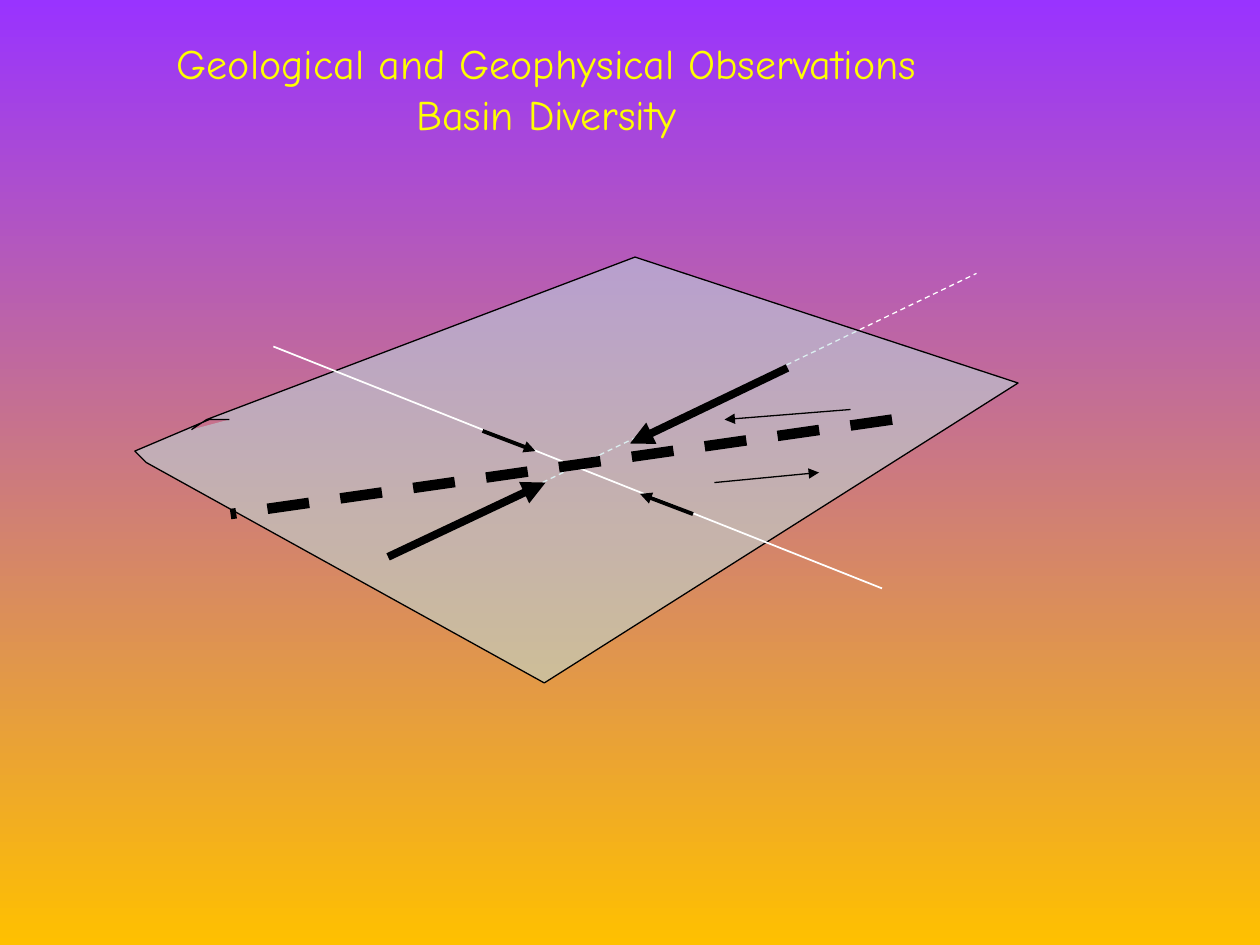
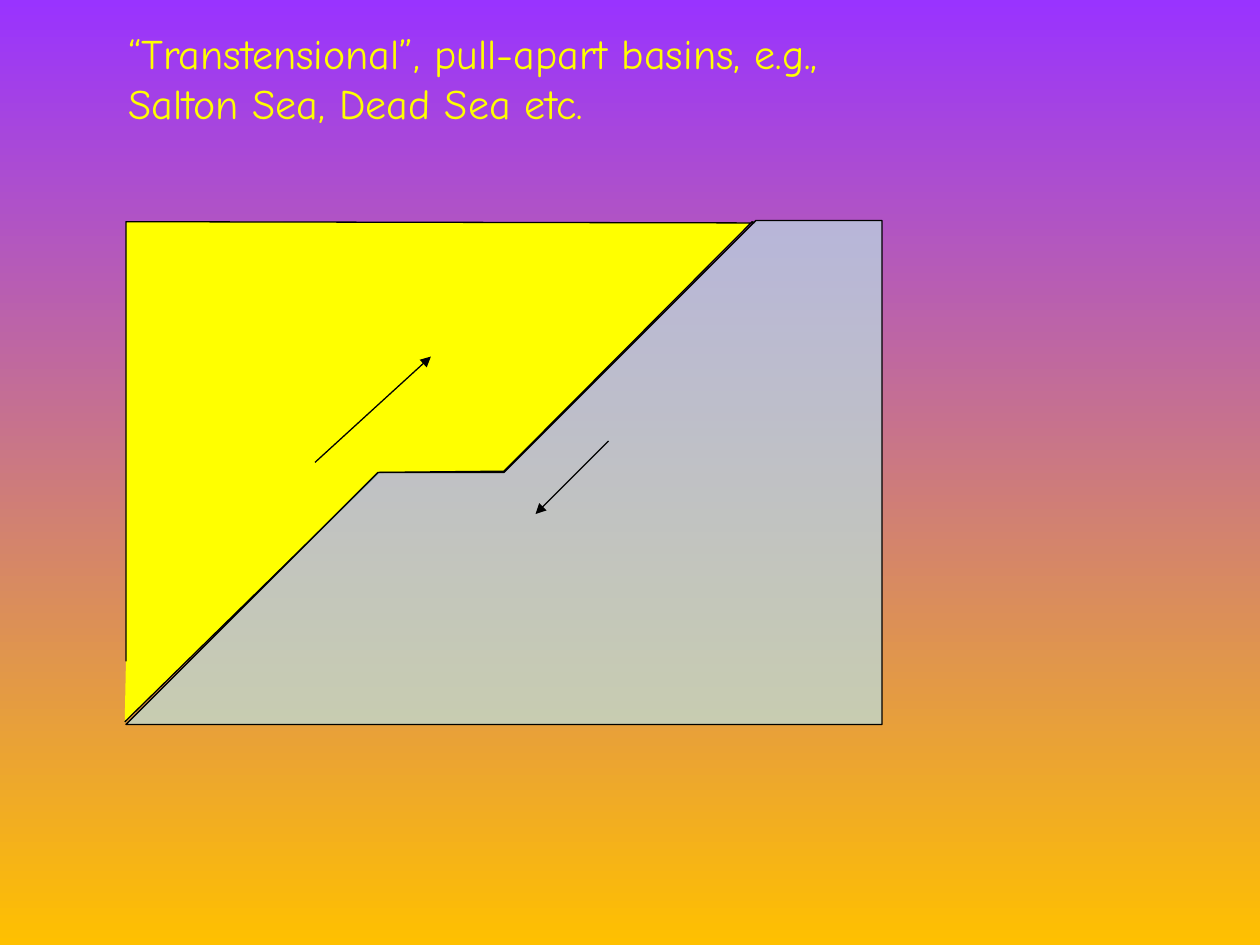
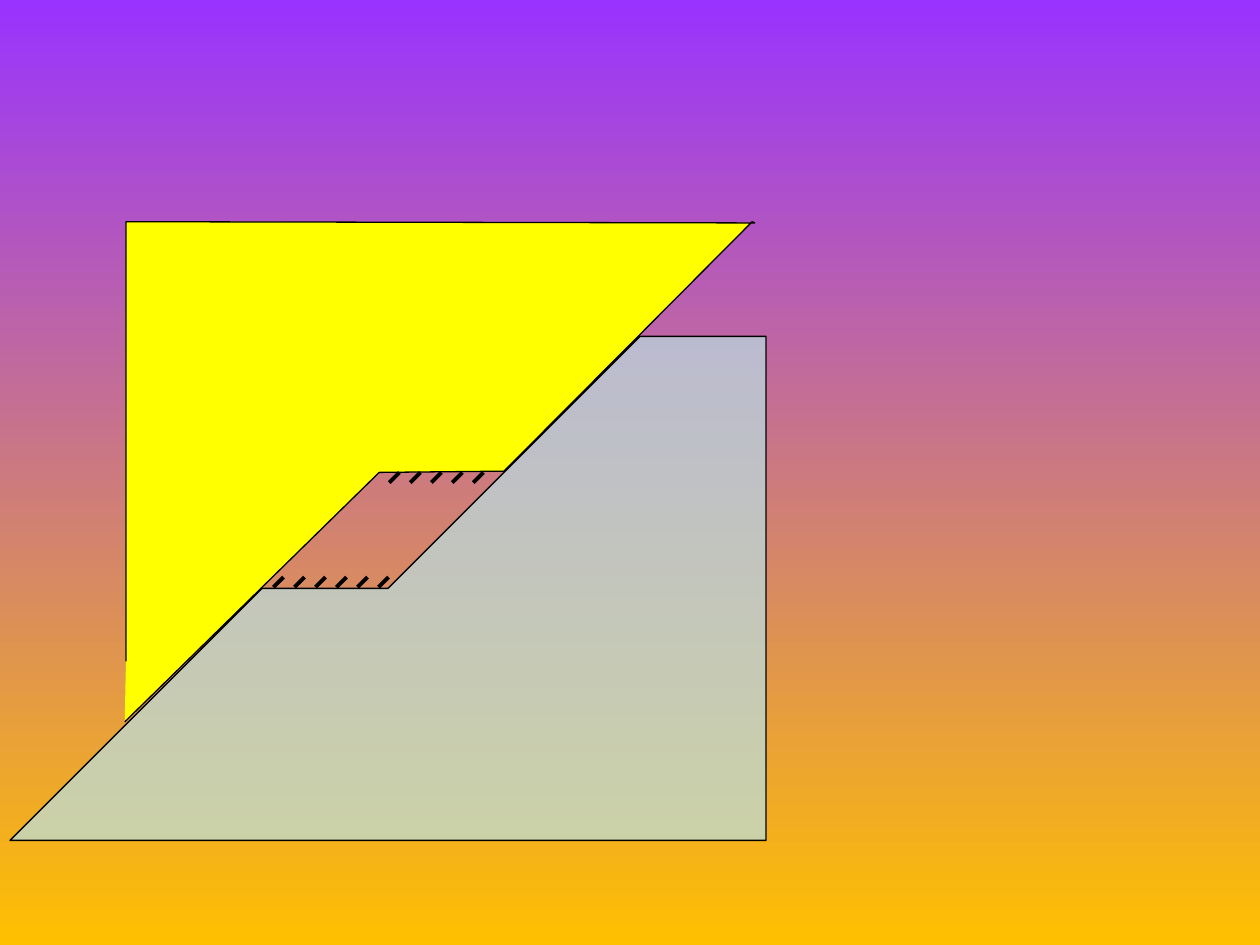
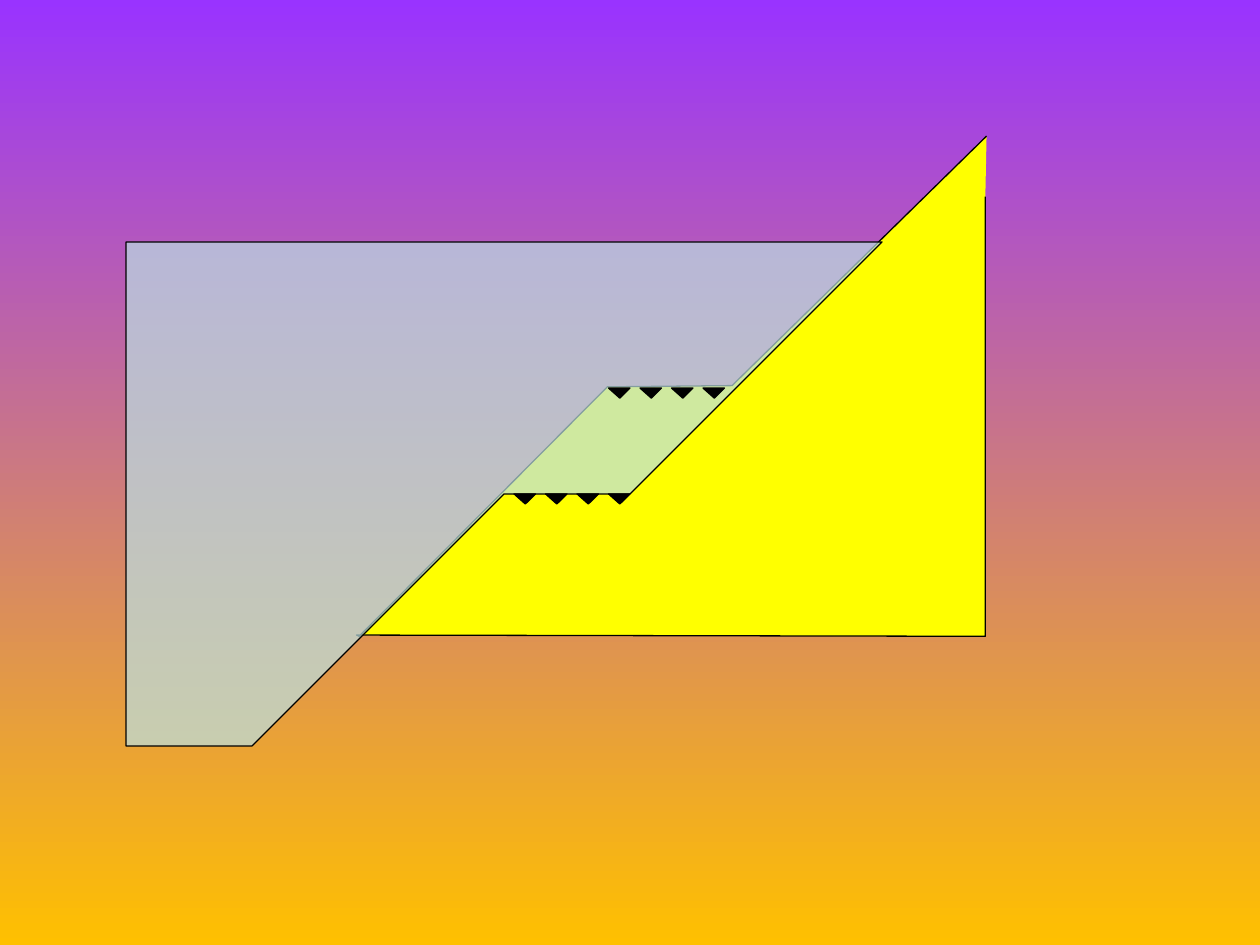
"""Four slides on basin diversity: strike-slip stress, pull-apart and compression."""
from typing import NamedTuple, Optional

from lxml import etree
from pptx import Presentation
from pptx.dml.color import RGBColor
from pptx.enum import dml, shapes, text
from pptx.oxml import ns
from pptx.util import Inches, Pt

FONT = "Comic Neue"
COLORS = {
    "sky": "9933FF",
    "ground": "FFC000",
    "title": "FFFF00",
    "yellow_block": "FFFF00",
    "pale_block": "BBE0E3",
    "black": "000000",
    "white": "FFFFFF",
}
TITLE_ONLY, BLANK = 5, 6
Point = tuple[float, float]


class Stroke(NamedTuple):
    start: Point
    end: Point
    width: float = 0.75
    color: str = "black"
    arrow: bool = False
    dashed: bool = False


class Outline(NamedTuple):
    points: list[Point]
    fill: str
    opacity: Optional[int] = None
    closed: bool = False


# Blocks on either side of the stepped fault
YELLOW_BLOCK = Outline(
    [(0.99, 5.73), (3.01, 3.75), (4, 3.74), (5.97, 1.76),
     (5.99, 1.77), (1, 1.76), (1, 5.25)], "yellow_block")
PALE_BLOCK = Outline(
    [(6, 1.75), (7, 1.75), (7, 5.75), (1, 5.75), (3, 3.75), (4, 3.75)],
    "pale_block", 70, True)
TOOTH = Outline([(0, 0), (0.17, 0), (0.09, 0.08)], "black", closed=True)

# Faulted plane with its stress axes
PLANE = Outline(
    [(1.52, 3.41), (1.64, 3.33), (5.04, 2.04), (8.08, 3.04), (4.32, 5.42),
     (1.16, 3.67), (1.07, 3.58), (1.66, 3.33), (1.82, 3.33)], "pale_block", 52)
HIDDEN_AXIS = Stroke((3.08, 4.42), (7.75, 2.17), 0.75, "white", dashed=True)
STRESS_STROKES = [
    Stroke((6.25, 2.92), (5, 3.52), 4.5, arrow=True),
    Stroke((3.08, 4.42), (4.33, 3.83), 4.5, arrow=True),
    Stroke((2.17, 2.75), (7, 4.67), 1, "white"),
    Stroke((5.5, 4.08), (5.08, 3.92), 2.25, arrow=True),
    Stroke((3.83, 3.42), (4.25, 3.58), 2.25, arrow=True),
    Stroke((7.08, 3.33), (1.83, 4.08), 6, dashed=True),
    Stroke((6.75, 3.25), (5.75, 3.33), arrow=True),
    Stroke((5.67, 3.83), (6.5, 3.75), arrow=True),
]
SLIP_ARROWS = [
    Stroke((4.83, 3.5), (4.25, 4.08), arrow=True),
    Stroke((2.5, 3.67), (3.42, 2.83), arrow=True),
]


def rgb(name: str) -> RGBColor:
    return RGBColor.from_string(COLORS[name])


def paint_background(presentation) -> None:
    fill = presentation.slide_master.background.fill
    fill.gradient()
    fill.gradient_angle = 270
    for stop, position, name in zip(fill.gradient_stops, (0, 1), ("sky", "ground")):
        stop.position = position
        stop.color.rgb = rgb(name)


def add_slide(presentation, layout: int = BLANK):
    return presentation.slides.add_slide(presentation.slide_layouts[layout])


def draw_stroke(slide, stroke: Stroke) -> None:
    ends = [Inches(value) for value in (*stroke.start, *stroke.end)]
    connector = slide.shapes.add_connector(shapes.MSO_CONNECTOR.STRAIGHT, *ends)
    line = connector.line
    line.width = Pt(stroke.width)
    line.color.rgb = rgb(stroke.color)
    if stroke.dashed:
        line.dash_style = dml.MSO_LINE.DASH
    properties = connector._element.spPr
    if stroke.arrow:
        etree.SubElement(properties.find(ns.qn("a:ln")), ns.qn("a:tailEnd"), type="triangle")
    etree.SubElement(properties, ns.qn("a:effectLst"))


def draw_outline(slide, outline: Outline, shift: Point = (0, 0), rotation: float = 0) -> None:
    start, *others = [(Inches(x + shift[0]), Inches(y + shift[1]))
                      for x, y in outline.points]
    builder = slide.shapes.build_freeform(*start)
    builder.add_line_segments(others, close=outline.closed)
    shape = builder.convert_to_shape()
    shape.rotation = rotation
    shape.shadow.inherit = False
    shape.fill.solid()
    shape.fill.fore_color.rgb = rgb(outline.fill)
    if outline.opacity is not None:
        color = shape._element.spPr.find(f"{ns.qn('a:solidFill')}/{ns.qn('a:srgbClr')}")
        etree.SubElement(color, ns.qn("a:alpha"), val=str(outline.opacity * 1000))
    shape.line.color.rgb = rgb("black")
    shape.line.width = Pt(0.75)


def write_heading(shape, wording: str, alignment) -> None:
    frame = shape.text_frame
    frame.word_wrap = True
    frame.text = wording
    for paragraph in frame.paragraphs:
        paragraph.alignment = alignment
        for run in paragraph.runs:
            run.font.name = FONT
            run.font.size = Pt(24)
            run.font.color.rgb = rgb("title")


def build_stress_slide(presentation) -> None:
    slide = add_slide(presentation, TITLE_ONLY)
    title = slide.shapes.title
    title.left, title.top = Inches(0.5), Inches(0.33)
    title.width, title.height = Inches(7.67), Inches(1.08)
    write_heading(title, "Geological and Geophysical Observations\vBasin Diversity",
                  text.PP_ALIGN.CENTER)
    title.text_frame.auto_size = text.MSO_AUTO_SIZE.NONE
    title.text_frame.vertical_anchor = text.MSO_ANCHOR.MIDDLE
    title.text_frame.margin_bottom = Inches(0.39)
    draw_stroke(slide, HIDDEN_AXIS)
    draw_outline(slide, PLANE)
    for stroke in STRESS_STROKES:
        draw_stroke(slide, stroke)


def build_transtension_slide(presentation) -> None:
    slide = add_slide(presentation)
    draw_outline(slide, YELLOW_BLOCK)
    draw_outline(slide, PALE_BLOCK)
    for arrow in SLIP_ARROWS:
        draw_stroke(slide, arrow)
    heading = slide.shapes.add_textbox(Inches(0.92), Inches(0.17), Inches(6.5), Inches(0.9))
    write_heading(heading, "“Transtensional”, pull-apart basins, e.g., "
                  "Salton Sea, Dead Sea etc.", text.PP_ALIGN.LEFT)
    heading.text_frame.auto_size = text.MSO_AUTO_SIZE.SHAPE_TO_FIT_TEXT


def build_pull_apart_slide(presentation) -> None:
    slide = add_slide(presentation)
    draw_outline(slide, YELLOW_BLOCK)
    draw_outline(slide, PALE_BLOCK, (-0.92, 0.92))
    # Normal-fault ticks along both edges of the basin
    for left, top, count in ((3.17, 3.75, 5), (2.25, 4.58, 6)):
        for index in range(count):
            x = left + index / 6
            draw_stroke(slide, Stroke((x, top), (x - 0.08, top + 0.08), 2.25))


def build_compression_slide(presentation) -> None:
    slide = add_slide(presentation)
    draw_outline(slide, YELLOW_BLOCK, (1.84, -0.68), 180)
    draw_outline(slide, PALE_BLOCK, (0, 0.17), 180)
    # Thrust teeth along both edges of the overlap
    for left, top in ((4.83, 3.08), (4.08, 3.92)):
        for index in range(4):
            draw_outline(slide, TOOTH, (left + index * 0.25, top))


def main() -> None:
    presentation = Presentation()
    presentation.slide_width, presentation.slide_height = Inches(10), Inches(7.5)
    paint_background(presentation)
    build_stress_slide(presentation)
    build_transtension_slide(presentation)
    build_pull_apart_slide(presentation)
    build_compression_slide(presentation)
    presentation.save("out.pptx")


if __name__ == "__main__":
    main()
